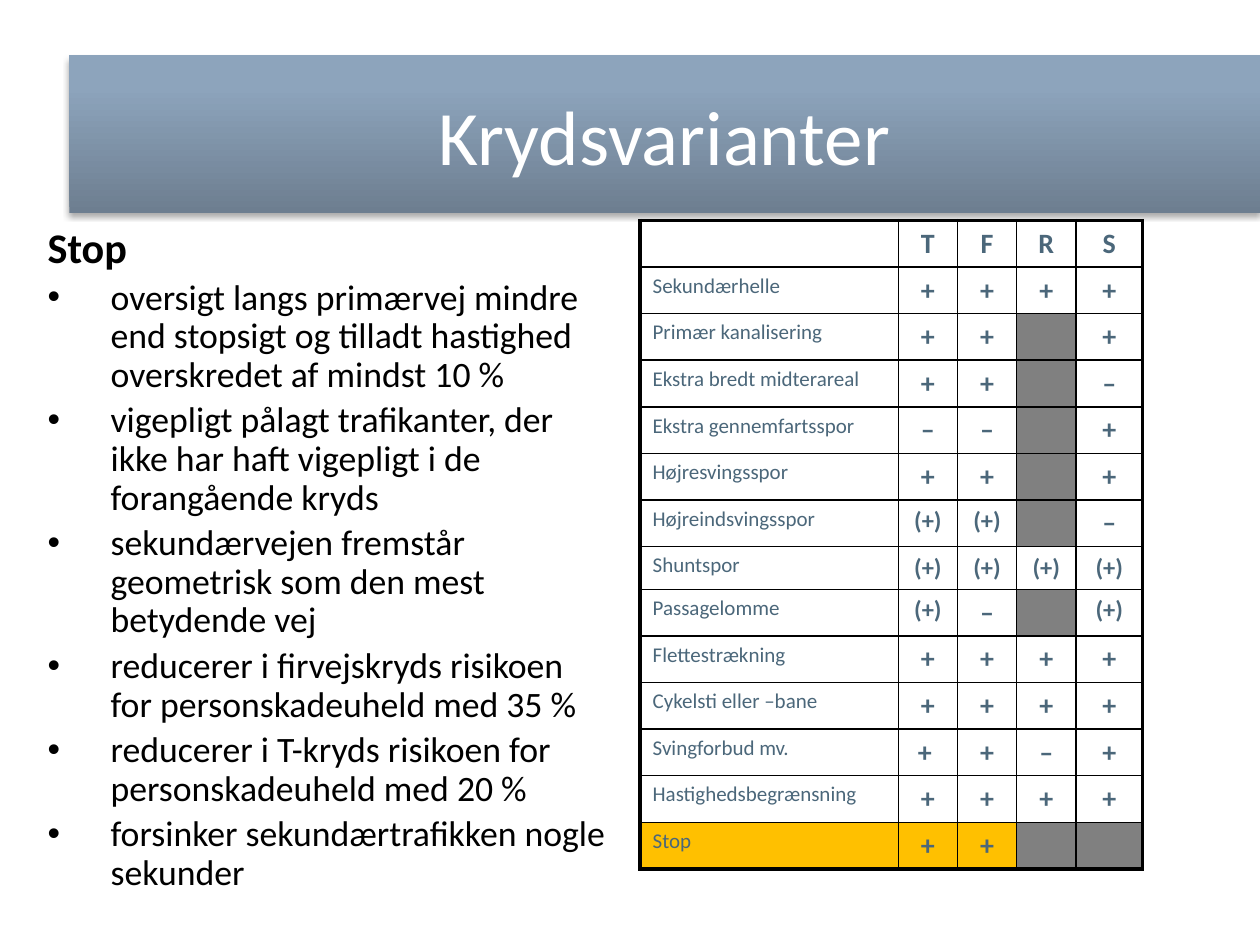
import pptx
import pptx.dml.color
import pptx.enum.shapes
import pptx.enum.text
import pptx.oxml
import pptx.oxml.ns
import pptx.util
from lxml import etree

Inches = pptx.util.Inches
Pt = pptx.util.Pt
RGBColor = pptx.dml.color.RGBColor
qn = pptx.oxml.ns.qn
CENTER = pptx.enum.text.PP_ALIGN.CENTER

FONT = "Calibri"
BLACK = RGBColor(0x00, 0x00, 0x00)
WHITE = RGBColor(0xFF, 0xFF, 0xFF)
GREY = RGBColor(0x80, 0x80, 0x80)
AMBER = RGBColor(0xFF, 0xC0, 0x00)
SLATE = RGBColor(0x4B, 0x67, 0x7A)
BANNER_STOPS = [
    (0, RGBColor(0x6D, 0x7E, 0x90)),
    (80, RGBColor(0x8D, 0xA4, 0xBC)),
    (100, RGBColor(0x8D, 0xA4, 0xBD)),
]

STOP_POINTS = [
    "oversigt langs primærvej mindre end stopsigt og tilladt hastighed overskredet af mindst 10 %",
    "vigepligt pålagt trafikanter, der ikke har haft vigepligt i de forangående kryds",
    "sekundærvejen fremstår geometrisk som den mest betydende vej",
    "reducerer i firvejskryds risikoen for personskadeuheld med 35 %",
    "reducerer i T-kryds risikoen for personskadeuheld med 20 %",
    "forsinker sekundærtrafikken nogle sekunder",
]

# None marks a combination that does not apply and is greyed out.
JUNCTION_ROWS = [
    ("", "T", "F", "R", "S"),
    ("Sekundærhelle", "+", "+", "+", "+"),
    ("Primær kanalisering", "+", "+", None, "+"),
    ("Ekstra bredt midterareal", "+", "+", None, "–"),
    ("Ekstra gennemfartsspor", "–", "–", None, "+"),
    ("Højresvingsspor", "+", "+", None, "+"),
    ("Højreindsvingsspor", "(+)", "(+)", None, "–"),
    ("Shuntspor", "(+)", "(+)", "(+)", "(+)"),
    ("Passagelomme", "(+)", "–", None, "(+)"),
    ("Flettestrækning", "+", "+", "+", "+"),
    ("Cykelsti eller –bane", "+", "+", "+", "+"),
    ("Svingforbud mv.", "+ ", "+", "–", "+"),
    ("Hastighedsbegrænsning", "+", "+", "+", "+"),
    ("Stop", "+", "+", None, None),
]
COLUMN_WIDTHS = [2.05, 0.47, 0.47, 0.47, 0.53]


def add_run(paragraph, text, size, color, bold=False):
    run = paragraph.add_run()
    run.text = text
    run.font.name = FONT
    run.font.size = Pt(size)
    run.font.bold = bold
    run.font.color.rgb = color


def add_child(parent, tag, **attributes):
    return etree.SubElement(parent, qn(tag), attributes)


def add_color(parent, color):
    return add_child(parent, "a:srgbClr", val=str(color))


def add_title_banner(slide, text):
    banner = slide.shapes.add_shape(
        pptx.enum.shapes.MSO_SHAPE.RECTANGLE,
        Inches(0.55), Inches(0.44), Inches(9.45), Inches(1.25))
    properties = banner._element.spPr
    gradient = add_child(properties, "a:gradFill", rotWithShape="1")
    stops = add_child(gradient, "a:gsLst")
    for position, color in BANNER_STOPS:
        add_color(add_child(stops, "a:gs", pos=str(position * 1000)), color)
    add_child(gradient, "a:lin", ang="16200000", scaled="0")
    banner.line.fill.background()
    effects = add_child(properties, "a:effectLst")
    shadow = add_child(effects, "a:outerShdw", blurRad=str(Pt(3.1)),
                       dist=str(Pt(1.8)), dir="5400000", rotWithShape="0")
    add_child(add_color(shadow, BLACK), "a:alpha", val="35000")

    frame = banner.text_frame
    frame.vertical_anchor = pptx.enum.text.MSO_ANCHOR.MIDDLE
    paragraph = frame.paragraphs[0]
    paragraph.alignment = CENTER
    add_run(paragraph, text, 44, WHITE)


def add_bullet_list(slide, heading, points):
    box = slide.shapes.add_textbox(
        Inches(0.28), Inches(1.75), Inches(4.64), Inches(5.39))
    frame = box.text_frame
    frame.word_wrap = True
    paragraph = frame.paragraphs[0]
    paragraph.line_spacing = 0.9
    add_run(paragraph, heading, 24.1, BLACK, bold=True)
    for point in points:
        paragraph = frame.add_paragraph()
        paragraph.line_spacing = 0.9
        paragraph.space_before = Pt(4)
        properties = paragraph._p.get_or_add_pPr()
        properties.set("marL", str(Inches(0.5)))
        properties.set("indent", str(Inches(-0.5)))
        add_child(properties, "a:buFont", typeface="Arial")
        add_child(properties, "a:buChar", char="•")
        add_run(paragraph, point, 20.4, BLACK)


def set_borders(cell, widths):
    """Draw black borders; widths are points keyed by L, R, T and B."""
    properties = cell._tc.get_or_add_tcPr()
    for side, width in widths.items():
        line = add_child(properties, f"a:ln{side}", w=str(Pt(width)))
        add_color(add_child(line, "a:solidFill"), BLACK)


def fill_cell(cell, text, is_label, color):
    cell.fill.solid()
    cell.fill.fore_color.rgb = color
    paragraph = cell.text_frame.paragraphs[0]
    if not text:
        # Keeps an empty cell from stretching its row
        add_child(paragraph._p, "a:endParaRPr", sz="1200")
    elif is_label:
        add_run(paragraph, text, 12, SLATE)
    else:
        paragraph.alignment = CENTER
        add_run(paragraph, text, 14 if "(" in text else 16, SLATE, bold=True)


def add_junction_table(slide):
    last_row, last_column = len(JUNCTION_ROWS) - 1, len(COLUMN_WIDTHS) - 1
    table = slide.shapes.add_table(
        last_row + 1, last_column + 1,
        Inches(5.08), Inches(1.75), Inches(sum(COLUMN_WIDTHS)), Inches(5.15)).table
    for column, width in zip(table.columns, COLUMN_WIDTHS):
        column.width = Inches(width)
    for i, values in enumerate(JUNCTION_ROWS):
        table.rows[i].height = Inches(0.34 if values[0] == "Shuntspor" else 0.37)
        for j, text in enumerate(values):
            cell = table.cell(i, j)
            at_edge = {"L": j == 0, "R": j == last_column,
                       "T": i == 0, "B": i == last_row}
            set_borders(cell, {side: 2.25 if outer else 1
                               for side, outer in at_edge.items()})
            if text is None:
                color = GREY
            else:
                color = AMBER if i == last_row else WHITE
            fill_cell(cell, text, j == 0, color)


def main():
    presentation = pptx.Presentation()
    presentation.slide_width = Inches(10)
    presentation.slide_height = Inches(7.5)
    slide = presentation.slides.add_slide(presentation.slide_layouts[6])
    add_title_banner(slide, "Krydsvarianter")
    add_bullet_list(slide, "Stop", STOP_POINTS)
    add_junction_table(slide)
    presentation.save("out.pptx")


if __name__ == "__main__":
    main()
